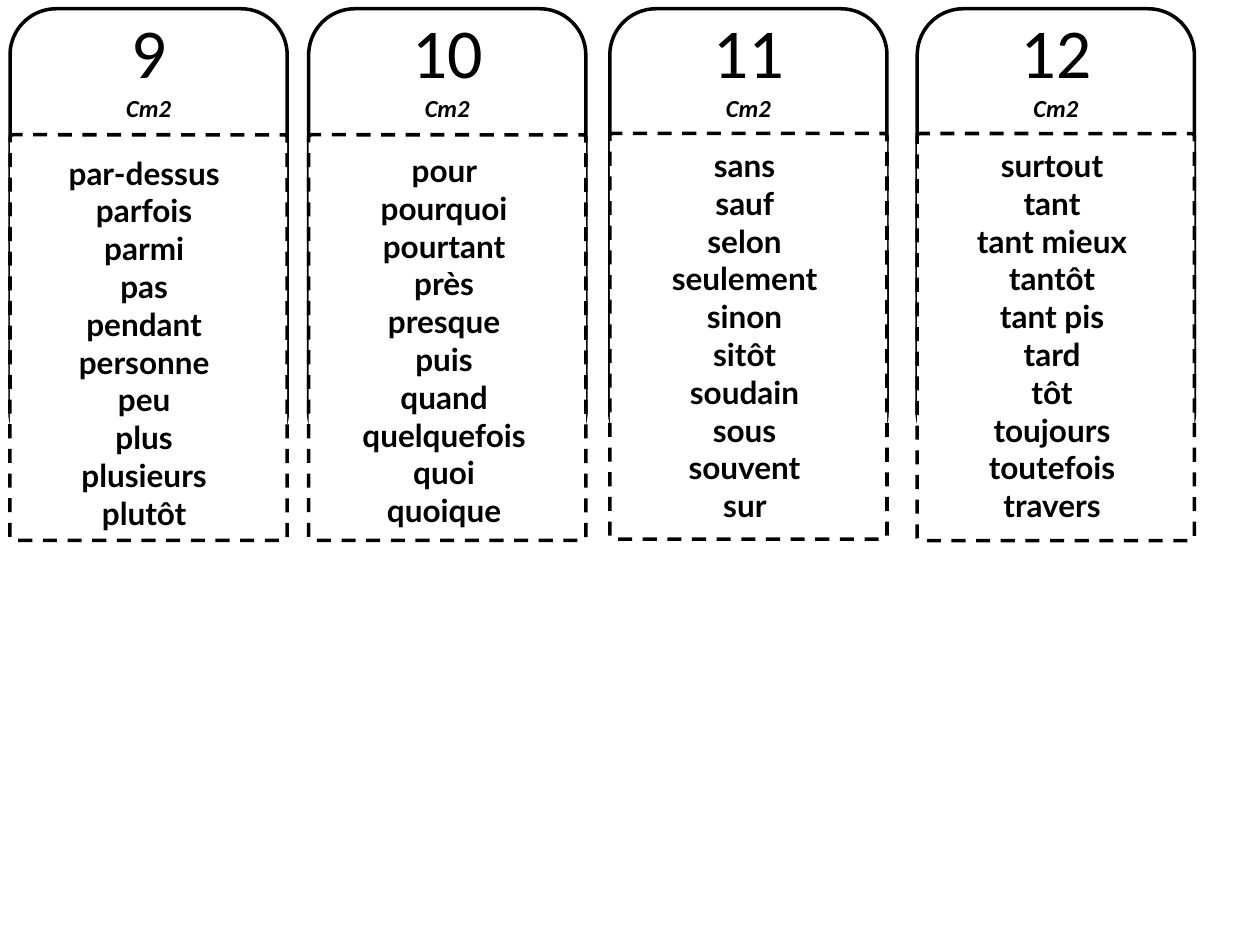
from dataclasses import dataclass

from pptx import Presentation
from pptx.dml.color import RGBColor
from pptx.enum.dml import MSO_LINE as Dash
from pptx.enum.shapes import MSO_SHAPE as Kind
from pptx.enum.text import MSO_ANCHOR as Anchor, MSO_AUTO_SIZE as Fit, PP_ALIGN as Align
from pptx.util import Inches, Pt

WIDE, HIGH = Inches(10), Inches(7.5)
INK, PAPER = "000000", "FFFFFF"
CARD_W, TAB_TOP, TAB_H = 22, 0.93, 47.6


@dataclass
class Card:
    """One word card; places are percent of the slide's width or height."""
    number: int
    left: float
    top: float
    high: float
    inset: float
    list_top: float
    list_w: float
    words: str


CARDS = [
    Card(9, 0.8, 14.27, 42.93, 0.8, 15.6, 20.3,
         "par-dessus,parfois,parmi,pas,pendant,personne,peu,plus,plusieurs,plutôt"),
    Card(10, 24.5, 14.27, 42.93, 0.9, 15.33, 20.3,
         "pour,pourquoi,pourtant,près,presque,puis,quand,quelquefois,quoi,quoique"),
    Card(11, 48.4, 14.13, 42.93, 0.7, 14.8, 20.6,
         "sans,sauf,selon,seulement,sinon,sitôt,soudain,sous,souvent,sur"),
    Card(12, 72.8, 14.13, 43.07, 0.7, 14.8, 20.6,
         "surtout,tant,tant mieux,tantôt,tant pis,tard,tôt,toujours,toutefois,travers"),
]


def paint(hue: str) -> RGBColor:
    """Turn a hex string into a colour."""
    return RGBColor.from_string(hue)


def place(x: float, y: float, w: float, h: float) -> tuple[int, ...]:
    """Turn percent of the slide into lengths."""
    return tuple(int(part * side / 100) for part, side in ((x, WIDE), (y, HIGH), (w, WIDE), (h, HIGH)))


def style(para, font: str, size: float, bold: bool = False, slant: bool = False) -> None:
    """Centre a paragraph and set the font of its runs."""
    para.alignment = Align.CENTER
    for run in para.runs:
        face = run.font
        face.name, face.size, face.bold, face.italic = font, Pt(size), bold, slant
        face.color.rgb = paint(INK)


def draw_box(slide, spot: tuple[int, ...]):
    """Draw a rounded outline without fill."""
    box = slide.shapes.add_shape(Kind.ROUNDED_RECTANGLE, *spot)
    box.shadow.inherit = False
    box.fill.background()
    box.line.color.rgb = paint(INK)
    box.line.width = Pt(2)
    return box


def draw_card(slide, card: Card) -> None:
    """Draw the numbered tab and the dashed panel over it."""
    tab = draw_box(slide, place(card.left, TAB_TOP, CARD_W, TAB_H))
    frame = tab.text_frame
    frame.vertical_anchor = Anchor.MIDDLE
    frame.margin_top, frame.margin_bottom = 0, int(HIGH * 0.356)
    frame.text = f"{card.number}\nCm2"
    head, unit = frame.paragraphs
    style(head, "Calibri", 40)
    style(unit, "Calibri", 14, bold=True, slant=True)

    panel = draw_box(slide, place(card.left, card.top, CARD_W, card.high))
    panel.adjustments[0] = 0.01
    panel.fill.solid()
    panel.fill.fore_color.rgb = paint(PAPER)
    panel.line.dash_style = Dash.DASH


def draw_list(slide, card: Card) -> None:
    """Write the words of a card, one a line."""
    spot = place(card.left + card.inset, card.list_top, card.list_w, 41.73)
    frame = slide.shapes.add_textbox(*spot).text_frame
    frame.word_wrap = True
    frame.auto_size = Fit.SHAPE_TO_FIT_TEXT
    frame.text = "\n".join(f"{word} " for word in card.words.split(","))
    for para in frame.paragraphs:
        style(para, "Lato", 18, bold=True)


def main() -> None:
    """Build the slide and save it."""
    deck = Presentation()
    deck.slide_width, deck.slide_height = WIDE, HIGH
    slide = deck.slides.add_slide(deck.slide_layouts[6])
    for draw in (draw_card, draw_list):
        for card in CARDS:
            draw(slide, card)
    deck.save("out.pptx")


if __name__ == "__main__":
    main()
